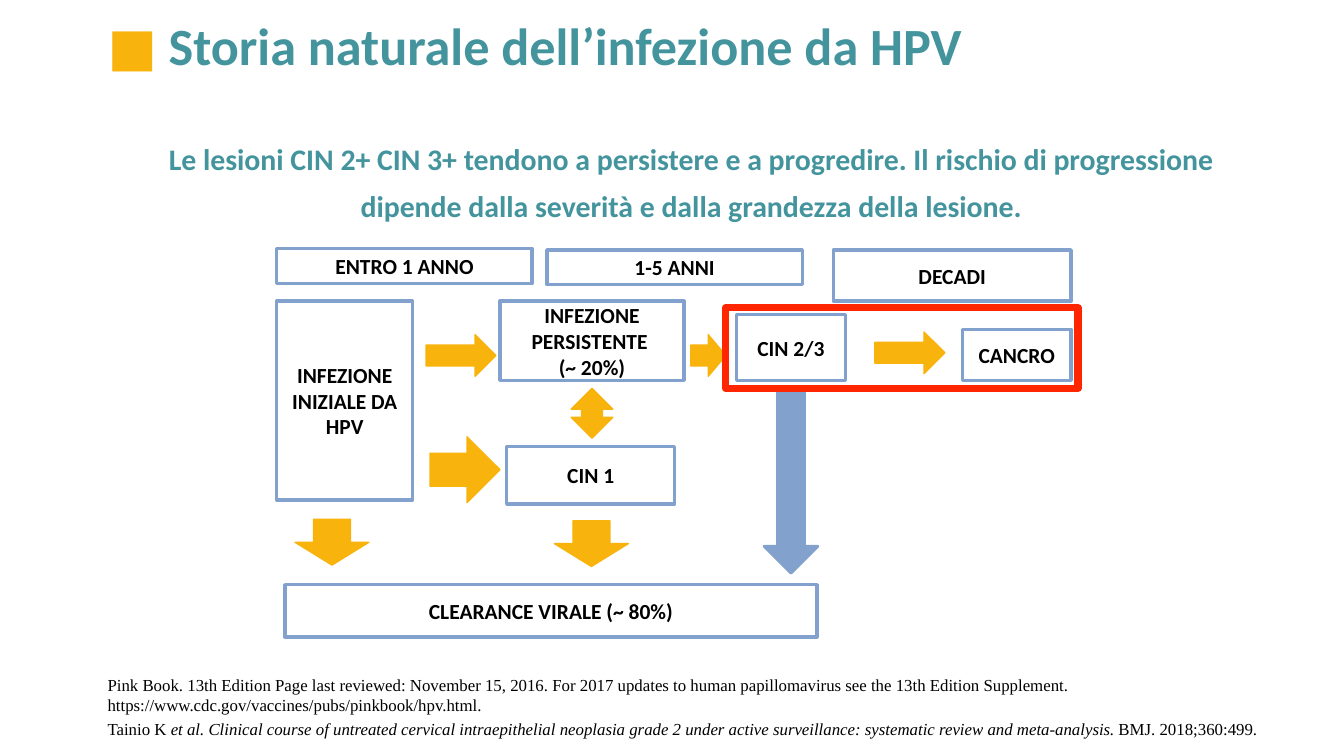
from lxml.etree import SubElement
from pptx import Presentation
from pptx.dml.color import RGBColor
from pptx.enum.shapes import MSO_SHAPE as Geo
from pptx.enum.text import MSO_ANCHOR as Anchor, MSO_AUTO_SIZE as Fit, PP_ALIGN as Align
from pptx.oxml.ns import qn
from pptx.util import Inches, Pt

GOLD = RGBColor(0xF9, 0xB3, 0x0D)
BLUE = RGBColor(0x82, 0xA1, 0xCC)
TEAL = RGBColor(0x44, 0x94, 0x9E)
RED = RGBColor(0xFF, 0x26, 0x00)
WHITE = RGBColor(0xFF, 0xFF, 0xFF)
BLACK = RGBColor(0x00, 0x00, 0x00)


def draw(geo, box, fill, edge, width):
    shape = slide.shapes.add_shape(geo, *map(Inches, box))
    shape.shadow.inherit = False
    if fill is None:
        shape.fill.background()
    else:
        shape.fill.solid()
        shape.fill.fore_color.rgb = fill
    shape.line.color.rgb = edge
    shape.line.width = Pt(width)
    return shape


def write(shape, paras, size, align, font="Calibri", bold=True):
    frame = shape.text_frame
    frame.word_wrap = True
    frame.auto_size = Fit.NONE
    frame.margin_left = frame.margin_right = Inches(0.07)
    frame.margin_top = frame.margin_bottom = Inches(0.04)
    for i, runs in enumerate(paras):
        para = frame.add_paragraph() if i else frame.paragraphs[0]
        para.alignment = align
        para.space_before = Pt(0)
        for text, color, slant in runs:
            run = para.add_run()
            run.text = text
            run.font.name = font
            run.font.size = Pt(size)
            run.font.bold = bold
            run.font.italic = slant
            run.font.color.rgb = color
    return frame


deck = Presentation()
deck.slide_width = Inches(10)
deck.slide_height = Inches(10 * 9 / 16)
slide = deck.slides.add_slide(deck.slide_layouts[1])

title = slide.shapes.title
title.left, title.top, title.width, title.height = map(Inches, (0.73, 0.06, 9.13, 0.55))
head = [("■ ", GOLD, False), ("Storia naturale dell’infezione da HPV", TEAL, False)]
write(title, [head], 28, Align.LEFT).vertical_anchor = Anchor.TOP

refs = slide.placeholders[1]
refs.left, refs.top, refs.width, refs.height = map(Inches, (0.73, 4.98, 9.13, 0.5))
cites = [
    [("Pink Book. 13th Edition Page last reviewed: November 15, 2016. For 2017 updates to human "
      "papillomavirus see the 13th Edition Supplement. "
      "https://www.cdc.gov/vaccines/pubs/pinkbook/hpv.html.", BLACK, False)],
    [("Tainio K ", BLACK, False),
     ("et al. Clinical course of untreated cervical intraepithelial neoplasia grade 2 under active "
      "surveillance: systematic review and meta-analysis. ", BLACK, True),
     ("BMJ. 2018;360:499.", BLACK, False)],
]
frame = write(refs, cites, 9, Align.LEFT, "Times New Roman", False)
frame.paragraphs[1].space_before = Pt(1.8)
for para in frame.paragraphs:
    props = para._p.get_or_add_pPr()
    props.set("marL", "0")
    props.set("indent", "0")
    SubElement(props, qn("a:buNone"))

arrows = [
    ((3.17, 2.49, 0.52, 0.31), 0),
    ((5.14, 2.49, 0.26, 0.31), 0),
    ((6.51, 2.47, 0.52, 0.31), 0),
    ((3.2, 3.25, 0.52, 0.49), 0),
    ((2.3, 3.76, 0.34, 0.55), 90),
    ((4.23, 3.77, 0.34, 0.55), 90),
]
for box, turn in arrows:
    draw(Geo.RIGHT_ARROW, box, GOLD, GOLD, 0.75).rotation = turn
draw(Geo.RIGHT_ARROW, (5.2, 3.38, 1.37, 0.4), BLUE, BLUE, 1.5).rotation = 90

steps = [
    ((2.06, 2.24, 1.01, 1.48), ["INFEZIONE INIZIALE DA HPV"]),
    ((2.06, 1.85, 1.9, 0.26), ["ENTRO 1 ANNO"]),
    ((6.2, 1.86, 1.77, 0.38), ["DECADI"]),
    ((4.07, 1.86, 1.9, 0.26), ["1-5 ANNI"]),
    ((3.72, 2.24, 1.37, 0.59), ["INFEZIONE PERSISTENTE ", "(~ 20%)"]),
    ((5.48, 2.34, 0.81, 0.49), ["CIN 2/3"]),
    ((7.16, 2.45, 0.81, 0.38), ["CANCRO"]),
    ((3.77, 3.32, 1.25, 0.43), ["CIN 1"]),
    ((2.12, 4.35, 3.96, 0.39), ["CLEARANCE VIRALE (~ 80%)"]),
]
for box, lines in steps:
    step = draw(Geo.RECTANGLE, box, WHITE, BLUE, 1.75)
    frame = write(step, [[(line, BLACK, False)] for line in lines], 11.5, Align.CENTER)
    frame.vertical_anchor = Anchor.MIDDLE

draw(Geo.UP_DOWN_ARROW, (4.25, 2.89, 0.31, 0.37), GOLD, GOLD, 0.75)
draw(Geo.RECTANGLE, (5.4, 2.29, 2.62, 0.6), None, RED, 4)

lead = slide.shapes.add_textbox(*map(Inches, (1.02, 0.93, 8.25, 0.75)))
claim = ("Le lesioni CIN 2+ CIN 3+ tendono a persistere e a progredire. Il rischio di progressione "
         "dipende dalla severità e dalla grandezza della lesione.")
frame = write(lead, [[(claim, TEAL, False)]], 16, Align.CENTER)
frame.paragraphs[0].line_spacing = 1.3

deck.save("out.pptx")
